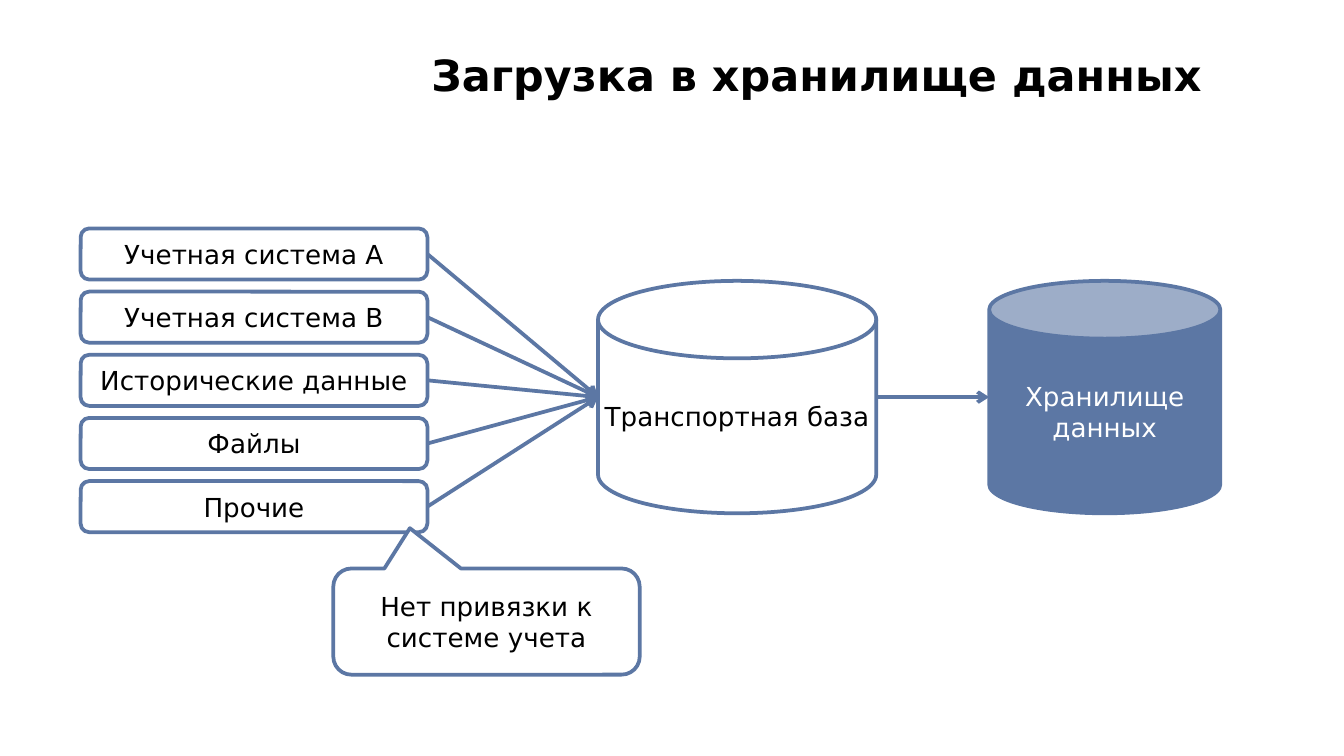
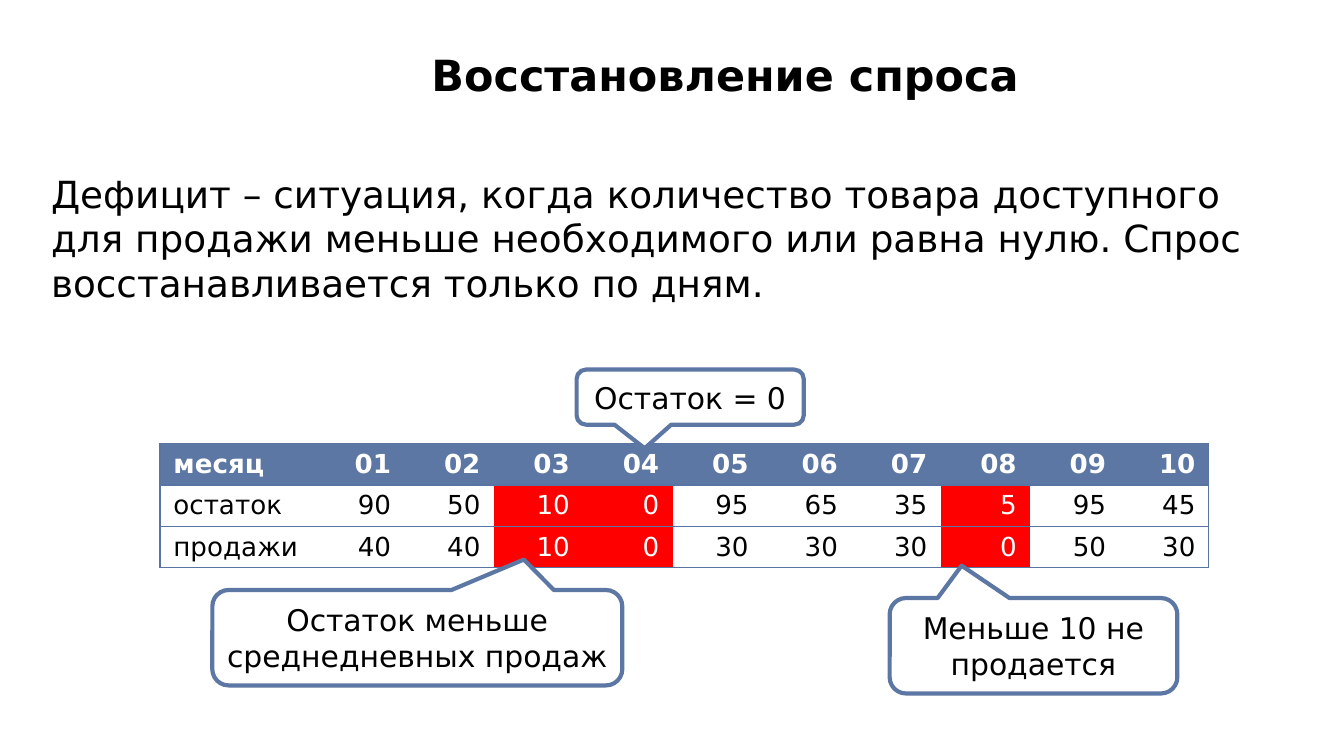
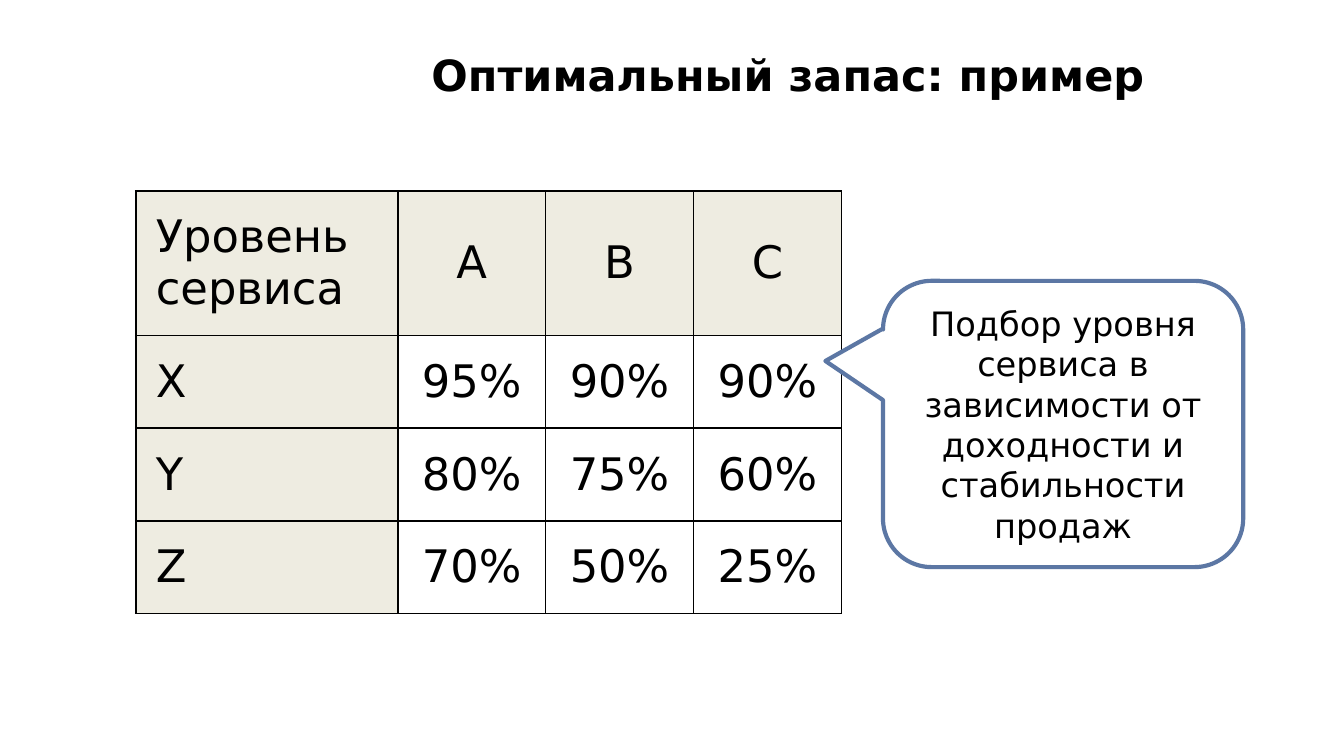
from pptx import Presentation, oxml, util as u
from pptx.dml.color import RGBColor
from pptx.enum import shapes, text
from pptx.oxml import ns

BLUE, RULE, RED, BEIGE = "5C77A4", "5874A2", "FF0000", "EEECE1"
WHITE, BLACK = "FFFFFF", "000000"
LEFT, CENTER, RIGHT = text.PP_ALIGN.LEFT, text.PP_ALIGN.CENTER, text.PP_ALIGN.RIGHT
MIDDLE, TOP = text.MSO_ANCHOR.MIDDLE, text.MSO_ANCHOR.TOP
SIDES = ("margin_left", "margin_top", "margin_right", "margin_bottom")
ROUNDED = shapes.MSO_SHAPE.ROUNDED_RECTANGLE
CALLOUT = shapes.MSO_SHAPE.ROUNDED_RECTANGULAR_CALLOUT


def paint(fill, hue):
    fill.solid()
    fill.fore_color.rgb = RGBColor.from_string(hue)


def write(holder, words, size, hue=BLACK, align=CENTER, bold=False, anchor=MIDDLE, pads=(0.5,) * 4):
    layout = dict(zip(SIDES, [int(STEP * pad) for pad in pads]), vertical_anchor=anchor)
    for key, value in layout.items():
        setattr(holder, key, value)
    frame = getattr(holder, "text_frame", holder)
    frame.word_wrap = True
    frame.text = words
    letters = {"name": "DejaVu Sans", "size": u.Pt(size), "bold": bold}
    for paragraph in frame.paragraphs:
        paragraph.alignment = align
        paragraph.space_before = u.Pt(0)
        for run in paragraph.runs:
            paint(run.font.fill, hue)
            for key, value in letters.items():
                setattr(run.font, key, value)


deck = Presentation()
deck.slide_width = u.Inches(10)
STEP = deck.slide_width / 100
deck.slide_height = int(STEP * 56.25)

slides = []
for heading, layout in (
    ("Загрузка в хранилище данных", 5),
    ("Восстановление спроса", 1),
    ("Оптимальный запас: пример", 5),
):
    slide = deck.slides.add_slide(deck.slide_layouts[layout])
    title = slide.shapes.title
    title.left, title.top, title.width, title.height = [int(STEP * n) for n in (31.1, 2.9, 66.4, 5.3)]
    write(title.text_frame, heading, 23, align=LEFT, bold=True, pads=(1, 0.5, 1, 0.5))
    slides.append(slide)
loading, demand, stock = slides

shortage = demand.placeholders[1]
shortage.left, shortage.top, shortage.width, shortage.height = [int(STEP * n) for n in (2.8, 12.2, 94.5, 38.6)]
definition = (
    "Дефицит – ситуация, когда количество товара доступного для продажи меньше "
    "необходимого или равна нулю. Спрос восстанавливается только по дням."
)
write(shortage.text_frame, definition, 20, align=LEFT, anchor=TOP, pads=(1, 0.5, 1, 0.5))
unbulleted = shortage.text_frame.paragraphs[0]._p.get_or_add_pPr()
unbulleted.set("marL", "0")
unbulleted.set("indent", "0")
unbulleted.append(oxml.parse_xml(f'<a:buNone {ns.nsdecls("a")}/>'))

sales = {
    "slide": demand, "at": (11.9, 33), "widths": [12.7, 5.5] + [6.65] * 9, "heights": [3] * 3,
    "rows": [
        ["месяц"] + [f"{month:02}" for month in range(1, 11)],
        "остаток 90 50 10 0 95 65 35 5 95 45".split(),
        "продажи 40 40 10 0 30 30 30 0 50 30".split(),
    ],
    "size": 14, "align": RIGHT, "pads": (1, 0.4, 1, 0.4), "rule": RULE, "weight": 0.75, "grid": False,
    "head": (BLUE, WHITE, True), "side": WHITE, "alerts": (3, 4, 8),
}
service = {
    "slide": stock, "at": (10.1, 14.2), "widths": [19.5, 11, 11, 11], "heights": [10.7, 6.9, 6.9, 6.9],
    "rows": [
        ["Уровень\nсервиса", "A", "B", "C"],
        ["X", "95%", "90%", "90%"],
        ["Y", "80%", "75%", "60%"],
        ["Z", "70%", "50%", "25%"],
    ],
    "size": 24, "align": CENTER, "pads": (1.5,) * 4, "rule": BLACK, "weight": 1, "grid": True,
    "head": (BEIGE, BLACK, False), "side": BEIGE, "alerts": (),
}
for plan in (sales, service):
    widths, heights = plan["widths"], plan["heights"]
    area = [int(STEP * n) for n in (*plan["at"], sum(widths), sum(heights))]
    table = plan["slide"].shapes.add_table(len(heights), len(widths), *area).table
    table.first_row = table.horz_banding = False
    table._tbl.tblPr.find(ns.qn("a:tableStyleId")).text = "{2D5ABB26-0587-4C30-8999-92F81FD0307C}"
    for column, width in zip(table.columns, widths):
        column.width = int(STEP * width)
    for r, (row, height) in enumerate(zip(table.rows, heights)):
        row.height = int(STEP * height)
        for c, words in enumerate(plan["rows"][r]):
            cell = table.cell(r, c)
            fill, hue, bold = WHITE, BLACK, False
            if r == 0:
                fill, hue, bold = plan["head"]
            elif c == 0:
                fill = plan["side"]
            elif c in plan["alerts"]:
                fill, hue = RED, WHITE
            align = plan["align"] if c else LEFT
            write(cell, words, plan["size"], hue, align, bold, pads=plan["pads"])
            edges = {"L": plan["grid"] or c == 0, "R": plan["grid"] or c == len(widths) - 1, "T": True, "B": True}
            for edge, drawn in edges.items():
                if drawn:
                    cell._tc.get_or_add_tcPr().append(oxml.parse_xml(
                        f'<a:ln{edge} {ns.nsdecls("a")} w="{u.Pt(plan["weight"])}"><a:solidFill>'
                        f'<a:srgbClr val="{plan["rule"]}"/></a:solidFill></a:ln{edge}>'))
            paint(cell.fill, fill)

sources = ("Учетная система A", "Учетная система B", "Исторические данные", "Файлы", "Прочие")
figures = [
    (loading, ROUNDED, (6, 17 + 4.7 * i, 25.8, 3.8), (), source, 14, WHITE, 2)
    for i, source in enumerate(sources)
] + [
    (loading, shapes.MSO_SHAPE.FLOWCHART_MAGNETIC_DISK, (44.5, 20.9, 20.7, 17.3), (),
     "Транспортная база", 14, WHITE, 2),
    (loading, shapes.MSO_SHAPE.CAN, (73.6, 20.9, 17.2, 17.3), (0.25,), "Хранилище данных", 14, BLUE, 2),
    (loading, CALLOUT, (24.8, 42.3, 22.8, 7.9), (-0.25, -0.88, 0.17), "Нет привязки к системе учета", 14, WHITE, 2),
    (demand, CALLOUT, (42.9, 27.5, 16.9, 4.1), (-0.2, 0.93, 0.17), "Остаток = 0", 16, WHITE, 2.25),
    (demand, CALLOUT, (15.8, 43.9, 30.5, 7.1), (0.26, -0.82, 0.17),
     "Остаток меньше среднедневных продаж", 16, WHITE, 2.25),
    (demand, CALLOUT, (66.2, 44.5, 21.4, 7.1), (-0.25, -0.84, 0.17), "Меньше 10 не продается", 16, WHITE, 2.25),
    (stock, CALLOUT, (65.7, 20.9, 26.8, 21.3), (-0.66, -0.22, 0.17),
     "Подбор уровня сервиса в зависимости от доходности и стабильности продаж", 18, WHITE, 2.25),
]
drawn_figures = []
for slide, preset, at, bends, words, size, fill, weight in figures:
    figure = slide.shapes.add_shape(preset, *[int(STEP * n) for n in at])
    figure.shadow.inherit = False
    for i, bend in enumerate(bends):
        figure.adjustments[i] = bend
    paint(figure.fill, fill)
    paint(figure.line.fill, BLUE)
    figure.line.width = u.Pt(weight)
    write(figure.text_frame, words, size, WHITE if fill == BLUE else BLACK)
    drawn_figures.append(figure)

*systems, transit, warehouse = drawn_figures[:len(sources) + 2]
for start, goal in [(system, transit) for system in systems] + [(transit, warehouse)]:
    flow = loading.shapes.add_connector(
        shapes.MSO_CONNECTOR.STRAIGHT,
        start.left + start.width, start.top + start.height // 2,
        goal.left, goal.top + goal.height // 2)
    if start in systems:
        flow.begin_connect(start, 3)
    paint(flow.line.fill, BLUE)
    flow.line.width = u.Pt(2)
    outline = flow._element.spPr
    outline.find(ns.qn("a:ln")).append(oxml.parse_xml(f'<a:tailEnd {ns.nsdecls("a")} type="arrow"/>'))
    outline.append(oxml.parse_xml(f'<a:effectLst {ns.nsdecls("a")}/>'))

deck.save("out.pptx")
